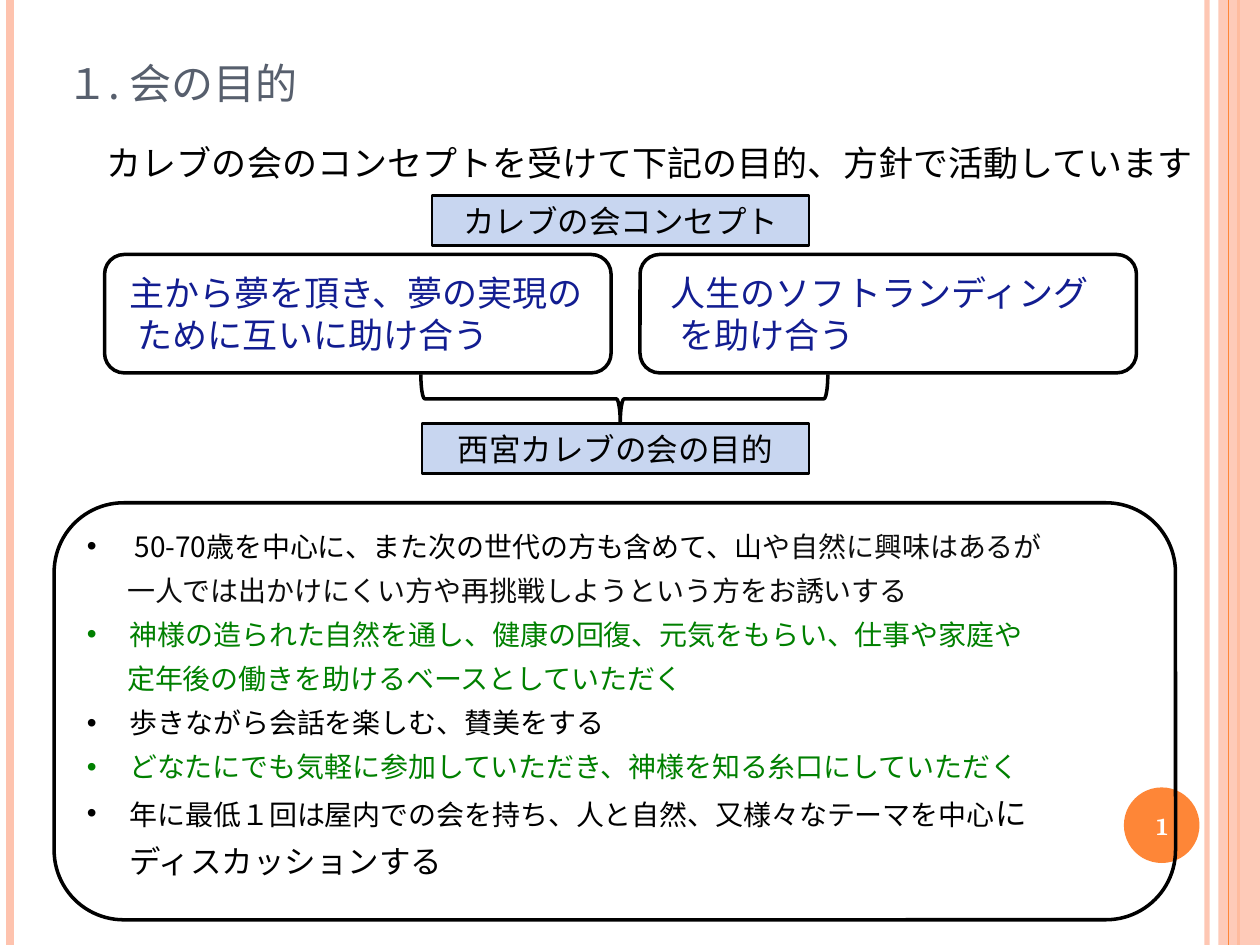
"""Build the slide on the aims of the Caleb group."""
from lxml.etree import SubElement
from pptx import Presentation
from pptx.dml.color import RGBColor
from pptx.enum.shapes import MSO_CONNECTOR as LINK, MSO_SHAPE as SHAPE
from pptx.enum.text import MSO_ANCHOR as ANCHOR, PP_ALIGN as ALIGN
from pptx.oxml.ns import qn
from pptx.util import Inches, Pt

WIDTH, HEIGHT = Inches(10), Inches(7.5)
SANS, SERIF = "Noto Sans CJK JP", "Cambria"
BLACK, DARK, GREEN, NAVY = "000000", "0D0D0D", "008000", "121D91"
ORANGE, PEACH, PALE_BLUE, SLATE, WHITE = "FE8637", "FEC3AE", "C8D6F0", "575F6D", "FFFFFF"
LINE_HEIGHT = 1.2

RAILS = [(95.8, PEACH, 3, 93), (0.8, PEACH, 4.5, 100), (98.3, ORANGE, 1.5, 100)]
LABELS = [((34.3, 20.67, 29.9, 5.33), "カレブの会コンセプト"),
          ((33.5, 44.8, 30.7, 5.33), "西宮カレブの会の目的")]
CARDS = [((8.3, 26.93, 40.2, 12.53), 0.05, "主から夢を頂き、夢の実現の", "ために互いに助け合う"),
         ((50.8, 26.93, 39.4, 12.53), 0.1, "人生のソフトランディング", "を助け合う")]
AIMS = [
    (True, 0.38, [("50-70歳を中心に、また次の世代の方も含めて、山", 16, BLACK),
                  ("や自然に興味はあるが", 16, DARK)]),
    (False, 0.32, [("一人では出かけにくい方や再挑戦しようという方をお誘いする", 16, DARK)]),
    (True, 0.34, [("神様の造られた自然を通し、健康の回復、元気をもらい、仕事や家庭や", 16, GREEN)]),
    (False, 0.32, [("定年後の働きを助けるベースとしていただく", 16, GREEN)]),
    (True, 0.34, [("歩きながら会話を楽しむ、賛美をする", 16, BLACK)]),
    (True, 0.34, [("どなたにでも気軽に参加していただき、神様を知る糸口にしていただく", 16, GREEN)]),
    (True, 0.34, [("年に最低１回は屋内での会を持ち、人と自然、又様々なテーマを中心", 16, BLACK),
                  ("に", 18, BLACK)]),
    (False, 0.34, [("ディスカッションする", 18, BLACK)]),
]


def color(code):
    """Turn a hex string into a colour."""
    return RGBColor.from_string(code)


def place(area):
    """Turn percentages of the slide into left, top, width and height."""
    return [int(share * side / 100) for share, side in zip(area, (WIDTH, HEIGHT) * 2)]


def set_opacity(fill, percent):
    """Make a solid fill let the background through."""
    tint = fill._xPr.find(qn("a:solidFill"))[0]
    SubElement(tint, qn("a:alpha")).set("val", str(percent * 1000))


def add_rail(page, x, code, width, opacity=100):
    """Draw a full-height vertical line."""
    left = int(WIDTH * x / 100)
    rail = page.shapes.add_connector(LINK.STRAIGHT, left, 0, left, HEIGHT)
    rail.line.color.rgb = color(code)
    rail.line.width = Pt(width)
    if opacity < 100:
        set_opacity(rail.line.fill, opacity)
    SubElement(rail._element.spPr, qn("a:effectLst"))


def add_box(page, kind, area, fill=None, outline=None):
    """Draw a preset shape with an optional fill and black outline width."""
    box = page.shapes.add_shape(kind, *place(area))
    box.shadow.inherit = False
    if fill:
        box.fill.solid()
        box.fill.fore_color.rgb = color(fill)
    else:
        box.fill.background()
    if outline:
        box.line.color.rgb = color(BLACK)
        box.line.width = Pt(outline)
    else:
        box.line.fill.background()
    return box


def prepare_text(box, anchor=ANCHOR.TOP):
    """Set wrapping and anchor, and return the text frame."""
    frame = box.text_frame
    frame.word_wrap = True
    frame.vertical_anchor = anchor
    return frame


def add_span(para, text, size, code, font=SANS):
    """Append one formatted run."""
    span = para.add_run()
    span.text = text
    span.font.size = Pt(size)
    span.font.name = font
    span.font.color.rgb = color(code)
    SubElement(span._r.get_or_add_rPr(), qn("a:ea")).set("typeface", font)
    return span


def add_para(frame, spans, align=ALIGN.LEFT, indent=0, after=0, bullet=False):
    """Fill the empty first paragraph or append another one."""
    first = frame.paragraphs[0]
    para = frame.add_paragraph() if first.runs else first
    para.alignment = align
    para.space_after = Pt(after)
    para.line_spacing = Pt(max(span[1] for span in spans) * LINE_HEIGHT)
    props = para._p.get_or_add_pPr()
    props.set("marL", str(Inches(indent)))
    if bullet:
        props.set("indent", str(-Inches(indent)))
        SubElement(props, qn("a:buFont")).set("typeface", "Arial")
        SubElement(props, qn("a:buChar")).set("char", "•")
    return [add_span(para, *span) for span in spans]


def add_text(page, area, span, anchor=ANCHOR.TOP, align=ALIGN.LEFT):
    """Add a one-line text box and return its run."""
    frame = prepare_text(page.shapes.add_textbox(*place(area)), anchor)
    return add_para(frame, [span], align)[0]


def add_frame(page):
    """Draw the rails, the side band and the number disc."""
    for rail in RAILS:
        add_rail(page, *rail)
    band = add_box(page, SHAPE.RECTANGLE, (96.7, 0, 3.3, 100), PEACH)
    set_opacity(band.fill, 87)
    add_rail(page, 97.5, ORANGE, 0.75)
    add_box(page, SHAPE.OVAL, (89.2, 83.33, 6, 8), ORANGE)


def add_label(page, area, text):
    """Draw a blue heading box."""
    box = add_box(page, SHAPE.RECTANGLE, area, PALE_BLUE, 1.5)
    add_para(prepare_text(box), [(text, 18, BLACK)], ALIGN.CENTER)


def add_card(page, area, indent, opening, closing):
    """Draw a rounded card whose second line is set further in."""
    box = add_box(page, SHAPE.ROUNDED_RECTANGLE, area, outline=2)
    frame = prepare_text(box, ANCHOR.MIDDLE)
    add_para(frame, [(opening, 20, NAVY)], indent=indent)
    add_para(frame, [(closing, 20, NAVY)], indent=indent + 0.07)


def add_brace(page):
    """Draw the brace that joins both cards."""
    brace = add_box(page, SHAPE.RIGHT_BRACE, (47.6, 20.67, 3.9, 43.07), outline=2)
    brace.rotation = 90
    brace.adjustments[0], brace.adjustments[1] = 0.08, 0.51


def add_aims(page):
    """Draw the large panel with the list of aims."""
    panel = add_box(page, SHAPE.ROUNDED_RECTANGLE, (4.3, 53.2, 89, 44.13), outline=2)
    frame = prepare_text(panel)
    for bullet, indent, spans in AIMS:
        add_para(frame, spans, indent=indent, after=6, bullet=bullet)


def main():
    """Build and save the deck."""
    deck = Presentation()
    deck.slide_width, deck.slide_height = WIDTH, HEIGHT
    page = deck.slides.add_slide(deck.slide_layouts[6])
    add_frame(page)
    title = add_text(page, (4.3, 0, 81.7, 16.67), ("１. 会の目的", 30, SLATE), ANCHOR.MIDDLE)
    title._r.get_or_add_rPr().set("cap", "small")
    add_text(page, (7.5, 14.27, 90.6, 5.87),
             ("カレブの会のコンセプトを受けて下記の目的、方針で活動しています", 20, BLACK))
    for label in LABELS:
        add_label(page, *label)
    for card in CARDS:
        add_card(page, *card)
    add_brace(page)
    add_aims(page)
    number = add_text(page, (88.9, 83.6, 6.7, 7.6), ("1", 14, WHITE, SERIF),
                      ANCHOR.MIDDLE, ALIGN.CENTER)
    number.font.bold = True
    deck.save("out.pptx")


if __name__ == "__main__":
    main()
